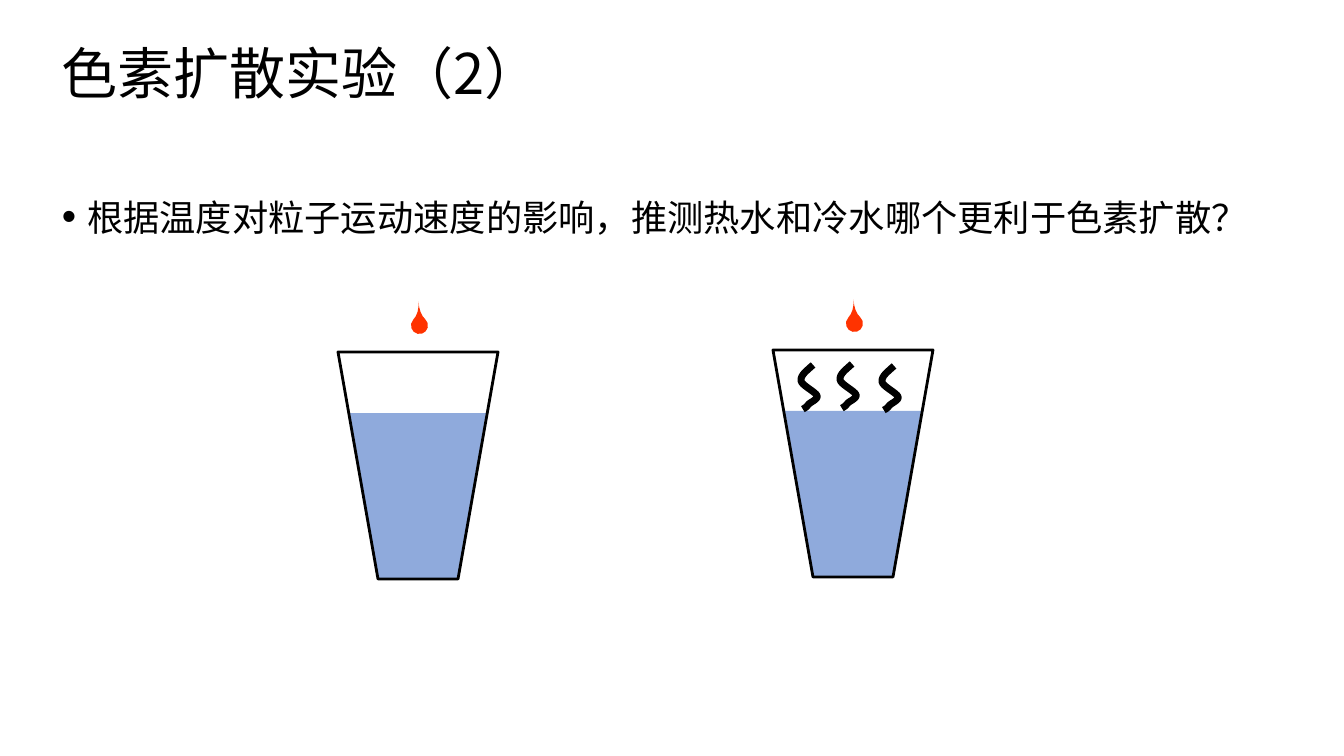
from lxml import etree
from pptx import Presentation
from pptx import util as u
from pptx.dml.color import RGBColor
from pptx.enum import shapes, text
from pptx.oxml.ns import qn

PX = 914400 / 100.8
BLACK = RGBColor(0x00, 0x00, 0x00)
WATER = RGBColor(0x8F, 0xAA, 0xDC)
RED = RGBColor(0xFF, 0x33, 0x00)
FONT = "Noto Sans CJK SC"
KIND = shapes.MSO_SHAPE


def px(*vals):
    return [round(v * PX) for v in vals]


def write(box, words, size, space):
    box.text_frame.word_wrap = True
    para = box.text_frame.paragraphs[0]
    para.text = words
    para.line_spacing = space
    font = para.runs[0].font
    font.size, font.name = u.Pt(size), FONT
    font.color.rgb = BLACK
    etree.SubElement(font._element, qn("a:ea"), typeface=FONT)
    return para


deck = Presentation()
deck.slide_width, deck.slide_height = px(1344, 756)
slide = deck.slides.add_slide(deck.slide_layouts[6])

# Title
title = slide.shapes.add_textbox(*px(52, 27, 1245, 99))
title.text_frame.vertical_anchor = text.MSO_ANCHOR.MIDDLE
write(title, "色素扩散实验（2）", 40, 0.9)

# Question with bullet
body = slide.shapes.add_textbox(*px(52, 154, 1245, 89))
body.text_frame.margin_top = px(19)[0]
para = write(body, "根据温度对粒子运动速度的影响，推测热水和冷水哪个更利于色素扩散？", 25.9, 1.5)
props = para._p.get_or_add_pPr()
props.set("marL", "228600")
props.set("indent", "-228600")
etree.SubElement(props, qn("a:buSzPct"), val="113000")
etree.SubElement(props, qn("a:buFont"), typeface="Arial")
etree.SubElement(props, qn("a:buChar"), char="•")

# Hot and cold cups: kind, offset and size, rotation, adjustment, fill
PARTS = [
    (KIND.TRAPEZOID, (12, 61, 136, 165), 180, 0.21, WATER),
    (KIND.TRAPEZOID, (0, 0, 160, 227), 180, 0.25, None),
    (KIND.TEAR, (73, -35, 17, 17), 313, 2, RED),
]
for left, top in [(773, 350), (338, 352)]:
    cup = slide.shapes.add_group_shape()
    for kind, (x, y, wide, high), turn, adj, fill in PARTS:
        part = cup.shapes.add_shape(kind, *px(left + x, top + y, wide, high))
        part.shadow.inherit = False
        part.rotation = turn
        part.adjustments[0] = adj
        if fill is not None:
            part.fill.solid()
            part.fill.fore_color.rgb = fill
            part.line.fill.background()
        else:
            part.fill.background()
            part.line.color.rgb = BLACK
            part.line.width = u.Pt(2)

# Steam: chained cubic curves, sampled into short steps
BENDS = [
    [(30, 0), (22, 2), (14, 3), (12, 8)],
    [(12, 8), (10, 12), (19, 24), (19, 29)],
    [(19, 29), (18, 33), (10, 31), (6, 33)],
    [(6, 33), (4, 34), (2, 34), (0, 34)],
]
STEPS = 8
curve = []
for bend in BENDS:
    for step in range(1, STEPS + 1):
        t = step / STEPS
        mix = [(1 - t) ** 3, 3 * t * (1 - t) ** 2, 3 * t * t * (1 - t), t ** 3]
        curve.append([sum(m * p[axis] for m, p in zip(mix, bend)) for axis in (0, 1)])

for left, top in [(793, 370), (832, 369), (874, 371)]:
    pen = slide.shapes.build_freeform(*px(left + 30, top))
    pen.add_line_segments([px(left + x, top + y) for x, y in curve], close=False)
    steam = pen.convert_to_shape()
    steam.shadow.inherit = False
    steam.rotation = 331.6
    steam.fill.background()
    steam.line.color.rgb = BLACK
    steam.line.width = u.Pt(5)

deck.save("out.pptx")
